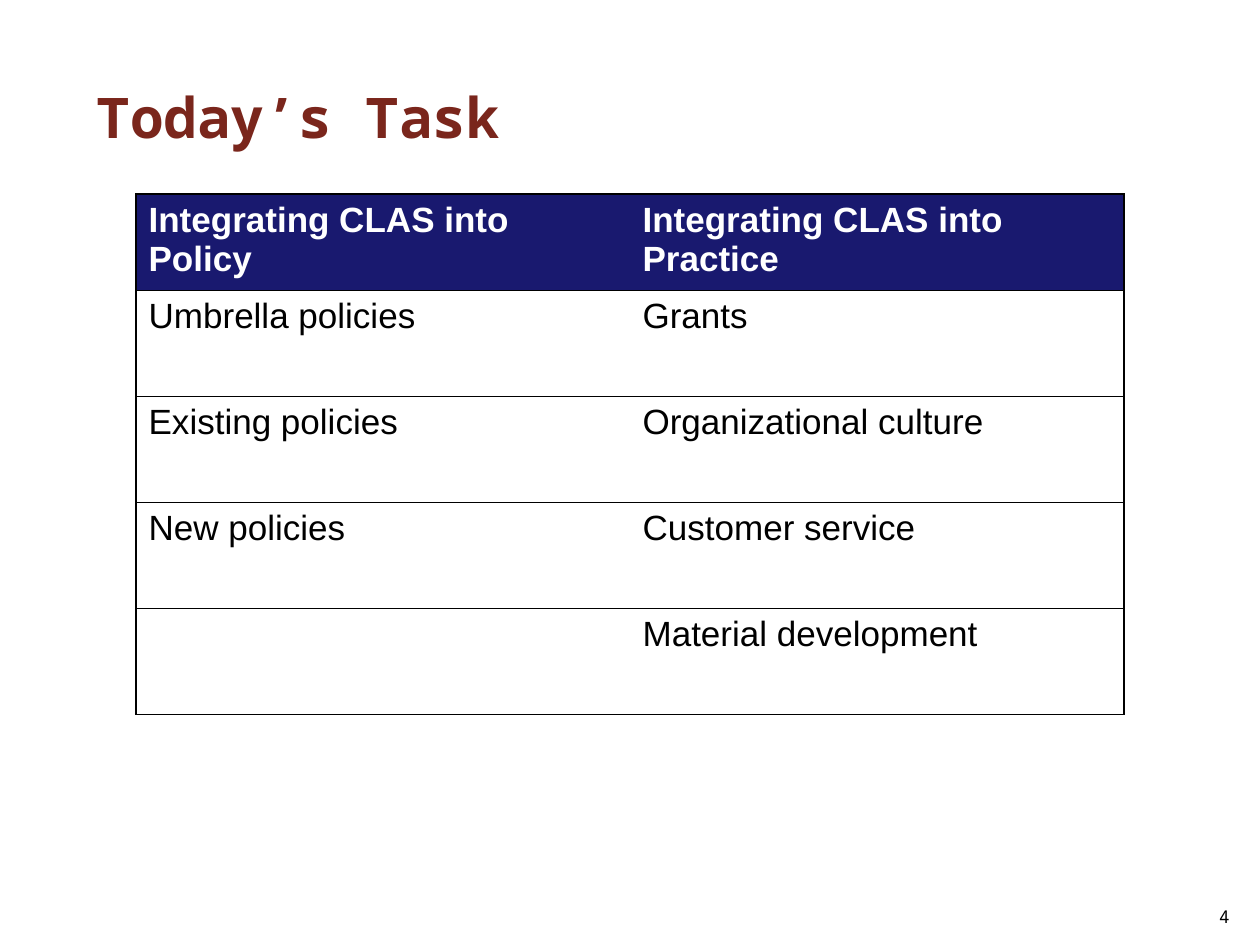
import pptx
import pptx.util
import pptx.dml.color
import pptx.enum.text
import pptx.oxml
import pptx.oxml.ns

TITLE = "Today’s Task"
PAGE_NUMBER = "4"
TASKS = [
    ("Integrating CLAS into Policy", "Integrating CLAS into Practice"),
    ("Umbrella policies", "Grants"),
    ("Existing policies", "Organizational culture"),
    ("New policies", "Customer service"),
    ("", "Material development"),
]
COLORS = {"title": "7A261C", "header": "19196F", "header_text": "FFFFFF", "text": "000000", "rule": "000000"}
HEADING_FONT, TABLE_FONT = "Noto Sans Mono", "Arial"
HEADER_HEIGHT, ROW_HEIGHT = 73, 106
PX = 914400 // 126


def box(*lengths):
    return [pptx.util.Emu(length * PX) for length in lengths]


def style(paragraph, font_name, size, color, bold=False):
    font = paragraph.font
    font.name, font.size, font.bold = font_name, pptx.util.Pt(size), bold
    font.color.rgb = pptx.dml.color.RGBColor.from_string(COLORS[color])


def set_border(cell, side, visible):
    paint = f'<a:solidFill><a:srgbClr val="{COLORS["rule"]}"/></a:solidFill>' if visible else "<a:noFill/>"
    return cell.get_or_add_tcPr().append(pptx.oxml.parse_xml(
        f'<a:{side} {pptx.oxml.ns.nsdecls("a")} w="9525">{paint}</a:{side}>'))


def add_title(slide):
    title = slide.shapes.title
    title.left, title.top, title.width, title.height = box(84, 38, 1113, 157)
    frame = title.text_frame
    frame.text = TITLE
    frame.vertical_anchor = pptx.enum.text.MSO_ANCHOR.MIDDLE
    frame.paragraphs[0].alignment = pptx.enum.text.PP_ALIGN.LEFT
    style(frame.paragraphs[0], HEADING_FONT, 32, "title", True)


def add_tasks(slide):
    height = HEADER_HEIGHT + ROW_HEIGHT * (len(TASKS) - 1)
    table = slide.shapes.add_table(len(TASKS), 2, *box(136, 194, 988, height)).table
    for row_index, labels in enumerate(TASKS):
        header = row_index == 0
        table.rows[row_index].height = box(HEADER_HEIGHT if header else ROW_HEIGHT)[0]
        for column_index, label in enumerate(labels):
            cell = table.cell(row_index, column_index)
            cell.text = label
            style(cell.text_frame.paragraphs[0], TABLE_FONT, 20, "header_text" if header else "text", header)
            for side, visible in (("lnL", column_index == 0), ("lnR", column_index == 1),
                                  ("lnT", True), ("lnB", True)):
                set_border(cell._tc, side, visible)
            if header:
                cell.fill.solid()
                cell.fill.fore_color.rgb = pptx.dml.color.RGBColor.from_string(COLORS["header"])
            else:
                cell.fill.background()


def add_page_number(slide):
    frame = slide.shapes.add_textbox(*box(1192, 883, 50, 50)).text_frame
    frame.word_wrap = True
    frame.vertical_anchor = pptx.enum.text.MSO_ANCHOR.BOTTOM
    frame.text = PAGE_NUMBER
    frame.paragraphs[0].alignment = pptx.enum.text.PP_ALIGN.RIGHT
    style(frame.paragraphs[0], HEADING_FONT, 10, "text")


def main():
    deck = pptx.Presentation()
    deck.slide_width, deck.slide_height = box(1260, 945)
    slide = deck.slides.add_slide(deck.slide_layouts[5])
    add_page_number(slide)
    add_tasks(slide)
    add_title(slide)
    deck.save("out.pptx")


if __name__ == "__main__":
    main()
